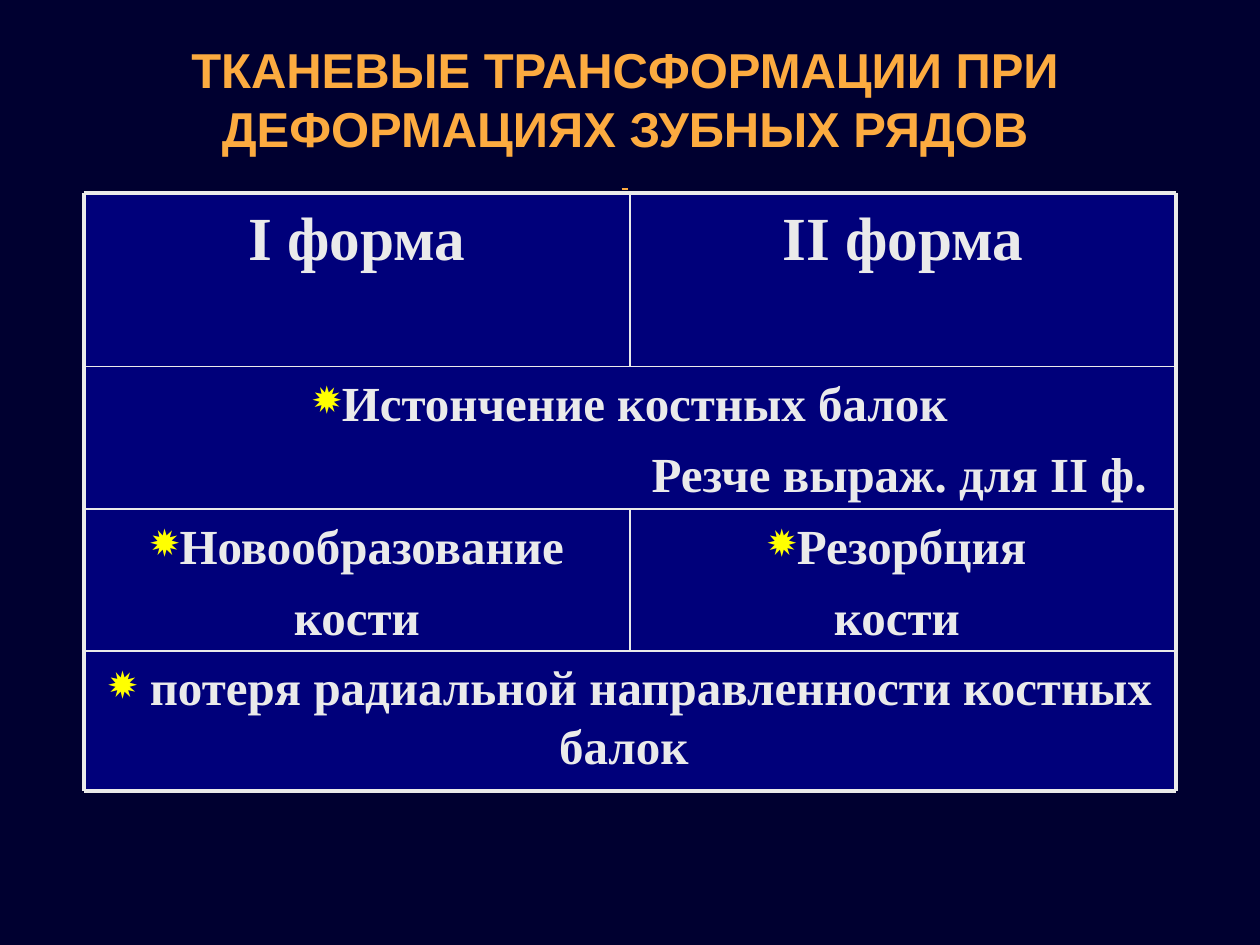
from itertools import accumulate

from lxml import etree
from pptx import Presentation
from pptx.dml.color import RGBColor
from pptx.enum.shapes import MSO_CONNECTOR, MSO_SHAPE
from pptx.enum.text import MSO_ANCHOR, PP_ALIGN
from pptx.oxml.ns import qn
from pptx.util import Cm, Pt

CENTER = PP_ALIGN.CENTER
TOP, MIDDLE = MSO_ANCHOR.TOP, MSO_ANCHOR.MIDDLE
RECTANGLE = MSO_SHAPE.RECTANGLE
STRAIGHT = MSO_CONNECTOR.STRAIGHT
NIGHT = RGBColor(0x00, 0x00, 0x30)
NAVY = RGBColor(0x00, 0x00, 0x7A)
ORANGE = RGBColor(0xFC, 0xAB, 0x40)
PALE = RGBColor(0xEA, 0xEA, 0xEA)
YELLOW = RGBColor(0xFF, 0xFF, 0x00)

OUTER, INNER = Pt(2.25), Pt(1)
ROW_HEIGHTS = [Cm(3.5), Cm(2.87), Cm(2.86), Cm(2.82)]
TITLE_FORMAT = {"name": "Arial", "size": Pt(28), "bold": True}
TITLE_END_FORMAT = {"name": "Times New Roman", "size": Pt(16), "bold": True, "underline": True}
HEADING_FORMAT = {"name": "Times New Roman", "size": Pt(35), "bold": True}
BODY_FORMAT = {"name": "Times New Roman", "size": Pt(28), "bold": True}

TITLE = [
    ("ТКАНЕВЫЕ ТРАНСФОРМАЦИИ ПРИ", TITLE_FORMAT),
    ("ДЕФОРМАЦИЯХ ЗУБНЫХ РЯДОВ", TITLE_FORMAT),
    (" ", TITLE_END_FORMAT),
]
FORM_ROWS = [
    [["I форма"], ["II форма"]],
    [["Истончение костных балок", "Резче выраж. для II ф."]],
    [["Новообразование", "кости"], ["Резорбция ", "кости "]],
    [[" потеря радиальной направленности костных балок "]],
]
NOTE_INDENT = Cm(10.85)


def add_paragraph(frame, index, text, font_format, color):
    paragraph = frame.paragraphs[0] if index == 0 else frame.add_paragraph()
    paragraph.alignment = CENTER
    run = paragraph.add_run()
    run.text = text
    for name, value in font_format.items():
        setattr(run.font, name, value)
    run.font.color.rgb = color
    return paragraph


def add_bullet(paragraph):
    properties = paragraph._p.get_or_add_pPr()
    properties.set("marL", "0")
    properties.set("indent", str(-Cm(0.4)))
    bullet_color = etree.SubElement(properties, qn("a:buClr"))
    etree.SubElement(bullet_color, qn("a:srgbClr"), val=str(YELLOW))
    etree.SubElement(properties, qn("a:buSzPct"), val="100000")
    etree.SubElement(properties, qn("a:buChar"), char="✹")


def add_title(slide, left, top, width, height):
    frame = slide.shapes.add_textbox(left, top, width, height).text_frame
    frame.word_wrap = True
    frame.vertical_anchor = MIDDLE
    for index, (text, font_format) in enumerate(TITLE):
        add_paragraph(frame, index, text, font_format, ORANGE)


def add_cell(shapes, left, top, width, height):
    cell = shapes.add_shape(RECTANGLE, left, top, width, height)
    cell.shadow.inherit = False
    cell.fill.solid()
    cell.fill.fore_color.rgb = NAVY
    cell.line.fill.background()
    cell.text_frame.word_wrap = True
    cell.text_frame.vertical_anchor = TOP
    return cell.text_frame


def fill_finding(frame, lines, merged):
    for index, text in enumerate(lines):
        paragraph = add_paragraph(frame, index, text, BODY_FORMAT, PALE)
        if index == 0:
            add_bullet(paragraph)
            continue
        paragraph.space_before = Pt(7)
        if merged:
            paragraph._p.get_or_add_pPr().set("marL", str(NOTE_INDENT))


def add_rule(shapes, start, end, width):
    rule = shapes.add_connector(STRAIGHT, *start, *end)
    rule.line.color.rgb = PALE
    rule.line.width = width
    etree.SubElement(rule._element.spPr, qn("a:effectLst"))


def add_forms_grid(slide, left, top, width, row_heights):
    shapes = slide.shapes.add_group_shape().shapes
    edges = list(accumulate(row_heights, initial=top))
    right, bottom, middle = left + width, edges[-1], left + width // 2

    for row, cells in enumerate(FORM_ROWS):
        cell_width = width // len(cells)
        for column, lines in enumerate(cells):
            frame = add_cell(shapes, left + column * cell_width, edges[row],
                             cell_width, row_heights[row])
            if row == 0:
                add_paragraph(frame, 0, lines[0], HEADING_FORMAT, PALE)
            else:
                fill_finding(frame, lines, len(cells) == 1)

    for edge in edges:
        add_rule(shapes, (left, edge), (right, edge), OUTER if edge in (top, bottom) else INNER)
    for side in (left, right):
        add_rule(shapes, (side, top), (side, bottom), OUTER)
    for row, cells in enumerate(FORM_ROWS):
        if len(cells) == 2:
            add_rule(shapes, (middle, edges[row]), (middle, edges[row + 1]), INNER)


def main():
    presentation = Presentation()
    presentation.slide_width = Cm(25.4)
    presentation.slide_height = Cm(19.05)
    slide = presentation.slides.add_slide(presentation.slide_layouts[6])
    slide.background.fill.solid()
    slide.background.fill.fore_color.rgb = NIGHT
    add_title(slide, Cm(1.07), Cm(0.64), Cm(23.06), Cm(3.38))
    add_forms_grid(slide, Cm(1.69), Cm(3.89), Cm(22.02), ROW_HEIGHTS)
    presentation.save("out.pptx")


if __name__ == "__main__":
    main()
